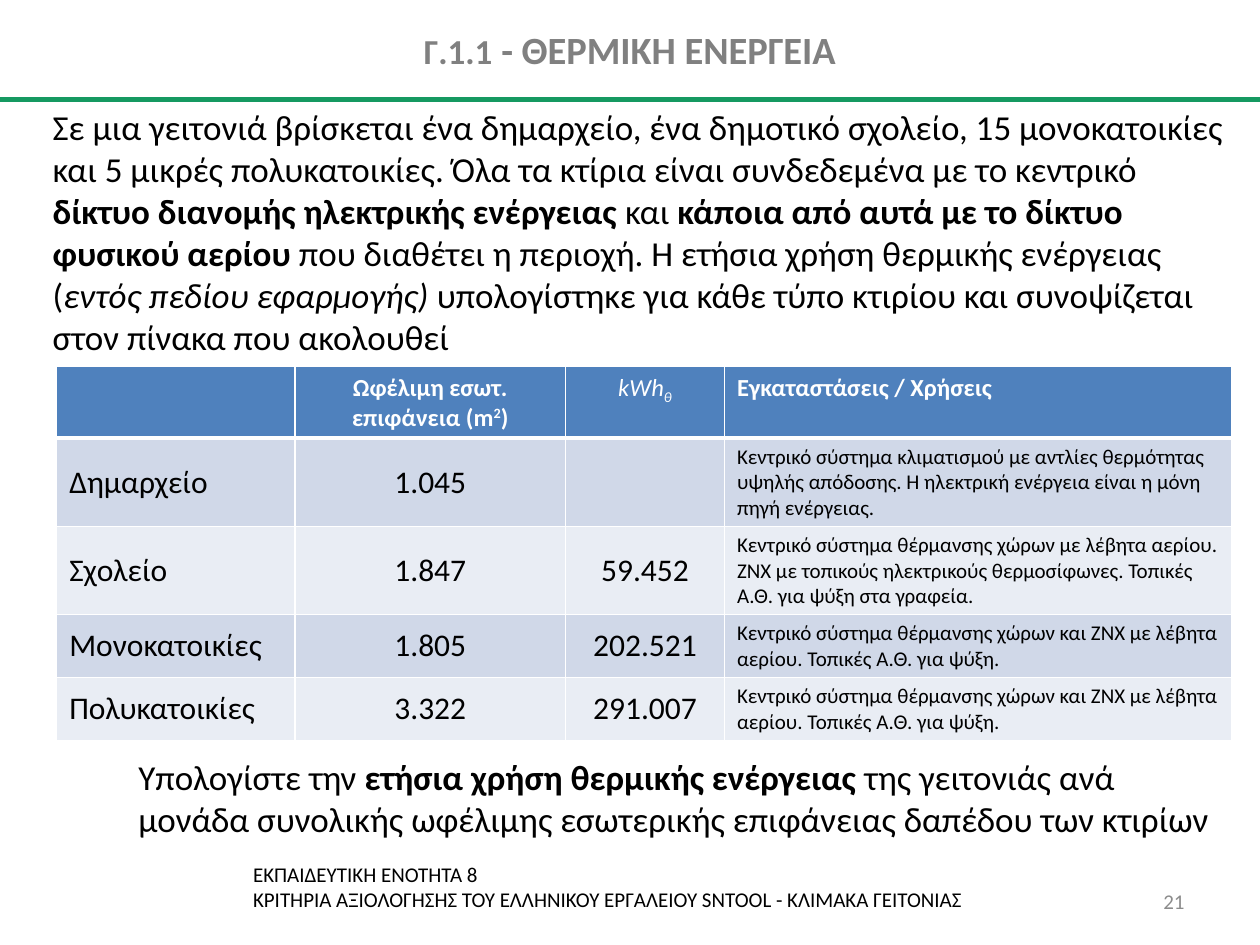
from lxml.etree import SubElement
from pptx import Presentation
from pptx.dml.color import RGBColor
from pptx.enum.shapes import MSO_CONNECTOR
from pptx.enum.text import MSO_ANCHOR, PP_ALIGN
from pptx.oxml.ns import qn
from pptx.util import Inches, Pt

FONT = "Calibri"
BLACK = RGBColor(0x00, 0x00, 0x00)
WHITE = RGBColor(0xFF, 0xFF, 0xFF)
GREEN = RGBColor(0x15, 0x99, 0x61)
TITLE_GRAY = RGBColor(0x80, 0x80, 0x80)
NUMBER_GRAY = RGBColor(0x8C, 0x8C, 0x8C)
HEADER_BLUE = RGBColor(0x4F, 0x81, 0xBD)
BANDS = [RGBColor(0xD0, 0xD8, 0xE8), RGBColor(0xE9, 0xED, 0xF4)]

# Content: text is a list of (words, style) spans
PLAIN, BOLD, ITALIC = {}, {"bold": True}, {"italic": True}
TITLE = [("Γ.1.1", {"size": 20}), (" ", PLAIN), ("- ΘΕΡΜΙΚΗ ΕΝΕΡΓΕΙΑ", PLAIN)]
INTRO = [
    ("Σε μια γειτονιά βρίσκεται ένα δημαρχείο, ένα δημοτικό σχολείο, "
     "15 μονοκατοικίες και 5 μικρές πολυκατοικίες. Όλα τα κτίρια είναι "
     "συνδεδεμένα με το κεντρικό", PLAIN),
    (" δίκτυο διανομής ηλεκτρικής ενέργειας ", BOLD),
    ("και ", PLAIN),
    ("κάποια από αυτά με το δίκτυο φυσικού αερίου ", BOLD),
    ("που διαθέτει η περιοχή. Η ετήσια χρήση θερμικής ενέργειας (", PLAIN),
    ("εντός πεδίου εφαρμογής)", ITALIC),
    (" υπολογίστηκε για κάθε τύπο κτιρίου και συνοψίζεται στον πίνακα "
     "που ακολουθεί", PLAIN),
]
TASK = [
    ("Υπολογίστε την ", PLAIN),
    ("ετήσια χρήση θερμικής ενέργειας ", BOLD),
    ("της γειτονιάς ανά μονάδα συνολικής ωφέλιμης εσωτερικής επιφάνειας "
     "δαπέδου των κτιρίων", PLAIN),
]
FOOTER = [("ΕΚΠΑΙΔΕΥΤΙΚΗ ΕΝΟΤΗΤΑ 8\vΚΡΙΤΗΡΙΑ ΑΞΙΟΛΟΓΗΣΗΣ ΤΟΥ ΕΛΛΗΝΙΚΟΥ "
           "ΕΡΓΑΛΕΙΟΥ SNTOOL - ΚΛΙΜΑΚΑ ΓΕΙΤΟΝΙΑΣ", PLAIN)]
PAGE_NUMBER = [("21", PLAIN)]

HEADER = [
    [],
    [("Ωφέλιμη εσωτ. επιφάνεια (m", BOLD), ("2", {"bold": True, "baseline": 30}),
     (")", BOLD)],
    [("kWh", {"bold": False, "italic": True}),
     ("θ", {"bold": False, "italic": True, "baseline": -25})],
    [("Εγκαταστάσεις / Χρήσεις", BOLD)],
]
HEATING_AND_WATER = ("Κεντρικό σύστημα θέρμανσης χώρων και ΖΝΧ με λέβητα αερίου. "
                     "Τοπικές Α.Θ. για ψύξη.")
BUILDINGS = [
    ("Δημαρχείο", "1.045", "",
     "Κεντρικό σύστημα κλιματισμού με αντλίες θερμότητας υψηλής απόδοσης. "
     "Η ηλεκτρική ενέργεια είναι η μόνη πηγή ενέργειας."),
    ("Σχολείο", "1.847", "59.452",
     "Κεντρικό σύστημα θέρμανσης χώρων με λέβητα αερίου. ΖΝΧ με τοπικούς "
     "ηλεκτρικούς θερμοσίφωνες. Τοπικές Α.Θ. για ψύξη στα γραφεία."),
    ("Μονοκατοικίες", "1.805", "202.521", HEATING_AND_WATER),
    ("Πολυκατοικίες", "3.322", "291.007", HEATING_AND_WATER),
]
COLUMN_WIDTHS = [1.89, 2.15, 1.26, 4.03]
ROW_HEIGHTS = [0.55, 0.7, 0.7, 0.5, 0.5]
COLUMN_ALIGNS = [PP_ALIGN.LEFT, PP_ALIGN.CENTER, PP_ALIGN.CENTER, PP_ALIGN.LEFT]
COLUMN_SIZES = [18, 18, 18, 12]


def write(para, spans, size, color, align=PP_ALIGN.LEFT, bold=None):
    para.alignment = align
    font = para.font
    font.name, font.size, font.bold = FONT, Pt(size), bold
    font.color.rgb = color
    for words, style in spans:
        for index, line in enumerate(words.split("\v")):
            if index:
                para.add_line_break()
            span = para.add_run()
            span.text = line
            span.font.bold = style.get("bold")
            span.font.italic = style.get("italic")
            if "size" in style:
                span.font.size = Pt(style["size"])
            if "baseline" in style:
                span.font._element.set("baseline", str(style["baseline"] * 1000))


def add_text(page, place, spans, size, color, anchor=MSO_ANCHOR.TOP, after=None, **look):
    box = page.shapes.add_textbox(*map(Inches, place))
    box.text_frame.word_wrap = True
    box.text_frame.vertical_anchor = anchor
    para = box.text_frame.paragraphs[0]
    write(para, spans, size, color, **look)
    if after:
        para.space_after = Pt(after)


def style_cell(cell, fill, bottom_width=1):
    properties = cell._tc.get_or_add_tcPr()
    widths = {"lnL": 1, "lnR": 1, "lnT": 1, "lnB": bottom_width}
    for side, width in widths.items():
        border = SubElement(properties, qn(f"a:{side}"), w=str(Pt(width)))
        solid = SubElement(border, qn("a:solidFill"))
        SubElement(solid, qn("a:srgbClr"), val=str(WHITE))
    cell.fill.solid()
    cell.fill.fore_color.rgb = fill


def add_building_table(page):
    frame = page.shapes.add_table(
        len(ROW_HEIGHTS), len(COLUMN_WIDTHS), Inches(0.45), Inches(2.91),
        Inches(sum(COLUMN_WIDTHS)), Inches(sum(ROW_HEIGHTS)))
    table = frame.table
    for column, width in zip(table.columns, COLUMN_WIDTHS):
        column.width = Inches(width)
    for row, height in zip(table.rows, ROW_HEIGHTS):
        row.height = Inches(height)

    for col, spans in enumerate(HEADER):
        cell = table.cell(0, col)
        style_cell(cell, HEADER_BLUE, bottom_width=3)
        write(cell.text_frame.paragraphs[0], spans, 14, WHITE, COLUMN_ALIGNS[col])

    last = len(COLUMN_WIDTHS) - 1
    for index, building in enumerate(BUILDINGS):
        for col, words in enumerate(building):
            cell = table.cell(index + 1, col)
            style_cell(cell, BANDS[index % 2])
            if col < last:
                cell.vertical_anchor = MSO_ANCHOR.MIDDLE
            spans = [(words, PLAIN)] if words else []
            write(cell.text_frame.paragraphs[0], spans, COLUMN_SIZES[col], BLACK,
                  COLUMN_ALIGNS[col])


def main():
    deck = Presentation()
    deck.slide_width, deck.slide_height = Inches(10), Inches(7.5)
    page = deck.slides.add_slide(deck.slide_layouts[6])

    # Rule under the title
    rule = page.shapes.add_connector(
        MSO_CONNECTOR.STRAIGHT, 0, Inches(0.79), Inches(10), Inches(0.79))
    rule.line.color.rgb = GREEN
    rule.line.width = Pt(3)
    SubElement(rule._element.spPr, qn("a:effectLst"))

    # Footer and page number
    add_text(page, (1.91, 6.79, 6.79, 0.5), FOOTER, 12, BLACK)
    add_text(page, (8.83, 6.95, 0.67, 0.4), PAGE_NUMBER, 12, NUMBER_GRAY,
             MSO_ANCHOR.MIDDLE, align=PP_ALIGN.RIGHT)

    # Introduction, table, task and title
    add_text(page, (0.32, 0.79, 9.5, 2.19), INTRO, 20, BLACK, after=6)
    add_building_table(page)
    add_text(page, (1, 5.95, 8.78, 0.53), TASK, 20, BLACK, after=6)
    add_text(page, (0, 0, 10, 0.78), TITLE, 22, TITLE_GRAY, MSO_ANCHOR.MIDDLE,
             align=PP_ALIGN.CENTER, bold=True)

    deck.save("out.pptx")


if __name__ == "__main__":
    main()
